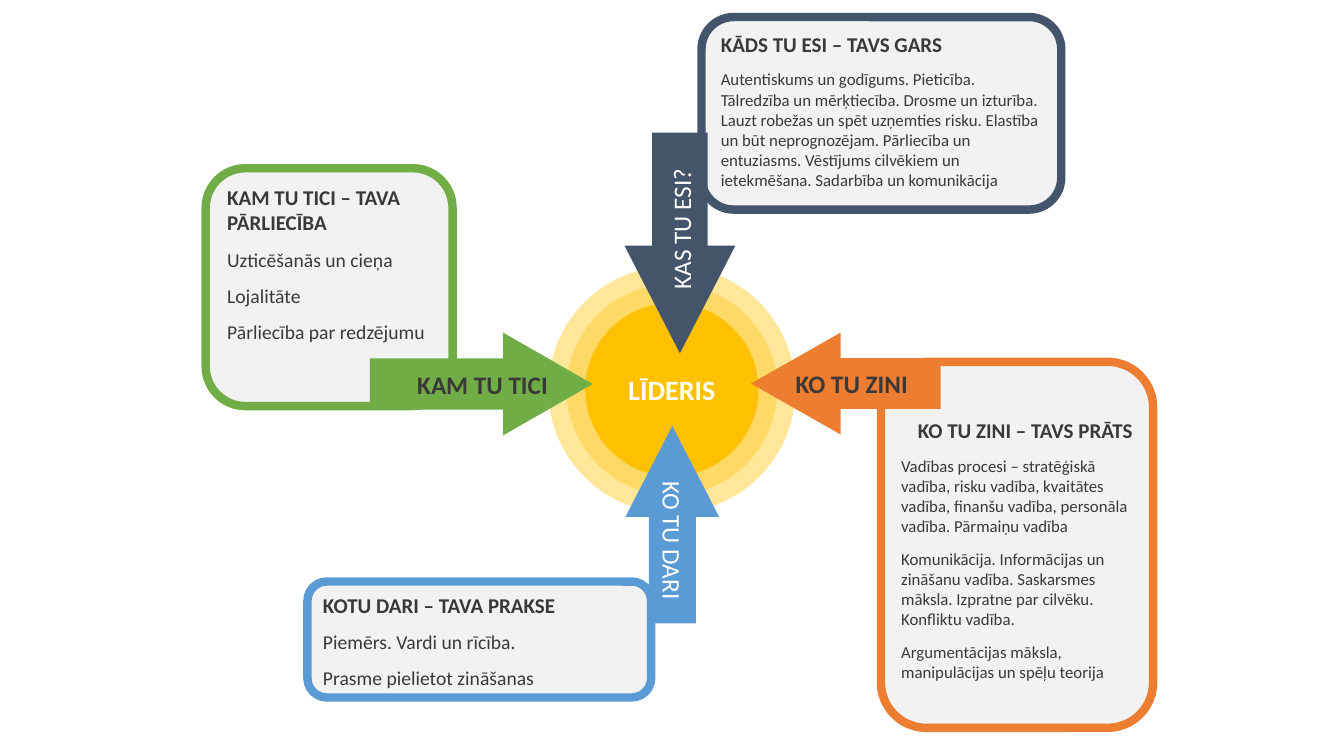
"""Build the leadership slide: four cards with arrows pointing at a central sun."""
import pptx
import pptx.util
import pptx.dml.color
import pptx.enum.shapes
import pptx.enum.text

Pt = pptx.util.Pt
SHAPES = pptx.enum.shapes.MSO_SHAPE
ALIGN = pptx.enum.text.PP_ALIGN
ANCHOR = pptx.enum.text.MSO_ANCHOR

COLORS = {
    "pale": "FFE699", "light": "FFD966", "gold": "FFC000", "card": "F2F2F2",
    "ink": "3B3838", "white": "FFFFFF", "orange": "ED7D31", "green": "70AD47",
    "blue": "5B9BD5", "navy": "44546A",
}
FONT = "Calibri"
SUN_CENTER = (479.9, 278.3)
SUN_RINGS = [(176.4, "pale", ""), (150.5, "light", ""), (123.8, "gold", "LĪDERIS")]
DEFAULT_INSETS = (7.2, 3.6, 7.2, 3.6)

CARDS = [
    {"box": (629.3, 258.5, 194.4, 261.4), "color": "orange", "size": 12,
     "insets": (5, 30.3, 5, 3), "title_align": ALIGN.RIGHT,
     "title": "KO TU ZINI – TAVS PRĀTS",
     "body": ["Vadības procesi – stratēģiskā vadība, risku vadība, kvaitātes vadība, "
              "finanšu vadība, personāla vadība. Pārmaiņu vadība",
              "Komunikācija. Informācijas un zināšanu vadība. Saskarsmes māksla. "
              "Izpratne par cilvēku. Konfliktu vadība.",
              "Argumentācijas māksla, manipulācijas un spēļu teorija"]},
    {"box": (146.9, 120.2, 176.4, 169.9), "color": "green", "size": 14,
     "insets": DEFAULT_INSETS, "title_align": ALIGN.LEFT,
     "title": "KAM TU TICI – TAVA PĀRLIECĪBA",
     "body": ["Uzticēšanās un cieņa", "Lojalitāte", "Pārliecība par redzējumu"]},
    {"box": (219.6, 415.4, 245.5, 82.8), "color": "blue", "size": 14,
     "insets": DEFAULT_INSETS, "title_align": ALIGN.LEFT,
     "title": "KOTU DARI – TAVA PRAKSE",
     "body": ["Piemērs. Vardi un rīcība.", "Prasme pielietot zināšanas"]},
    {"box": (501.1, 12.2, 257, 137.5), "color": "navy", "size": 12,
     "insets": DEFAULT_INSETS, "title_align": ALIGN.LEFT,
     "title": "KĀDS TU ESI – TAVS GARS",
     "body": ["Autentiskums un godīgums. Pieticība. Tālredzība un mērķtiecība. "
              "Drosme un izturība. Lauzt robežas un spēt uzņemties risku. Elastība "
              "un būt neprognozējam. Pārliecība un entuziasms. Vēstījums cilvēkiem "
              "un ietekmēšana. Sadarbība un komunikācija"]},
]

ARROWS = [
    (SHAPES.RIGHT_ARROW, (264.2, 237.6, 159.1, 73.4), 0, 0.87, "green", "KAM TU TICI", ALIGN.RIGHT),
    (SHAPES.RIGHT_ARROW, (406.8, 133.9, 157.7, 79.2), 90, 0.97, "navy", "", ALIGN.LEFT),
    (SHAPES.LEFT_ARROW, (536.4, 237.6, 135.4, 72.7), 0, 0.88, "orange", "KO TU ZINI", ALIGN.LEFT),
    (SHAPES.RIGHT_ARROW, (409.7, 341.3, 141.1, 67), 270, 0.97, "blue", "", ALIGN.LEFT),
]
SIDE_LABELS = [
    ("KAS TU ESI?", (417.6, 149, 138.2, 29), 270),
    ("KO TU DARI", (420.5, 371.5, 119.5, 29), 90),
]


def rgb(name):
    return pptx.dml.color.RGBColor.from_string(COLORS[name])


def add_filled(slide, kind, box, fill, line=None):
    shape = slide.shapes.add_shape(kind, *map(Pt, box))
    shape.shadow.inherit = False
    shape.fill.solid()
    shape.fill.fore_color.rgb = rgb(fill)
    if line:
        shape.line.color.rgb = rgb(line)
        shape.line.width = Pt(6)
    else:
        shape.line.fill.background()
    return shape


def set_frame(shape, insets, anchor):
    frame = shape.text_frame
    frame.word_wrap = True
    frame.vertical_anchor = anchor
    frame.margin_left, frame.margin_top, frame.margin_right, frame.margin_bottom = map(Pt, insets)
    return frame


def write(paragraph, text, size, color, bold, align, after=0):
    paragraph.text = text
    paragraph.alignment = align
    paragraph.space_after = Pt(after)
    for run in paragraph.runs:
        run.font.name = FONT
        run.font.size = Pt(size)
        run.font.bold = bold
        run.font.color.rgb = rgb(color)


def add_sun(slide):
    center_x, center_y = SUN_CENTER
    for diameter, color, text in SUN_RINGS:
        box = (center_x - diameter / 2, center_y - diameter / 2, diameter, diameter)
        ring = add_filled(slide, SHAPES.OVAL, box, color)
        if text:
            frame = set_frame(ring, (0, 3.6, 0, 3.6), ANCHOR.MIDDLE)
            write(frame.paragraphs[0], text, 20, "white", True, ALIGN.CENTER)


def add_card(slide, card):
    shape = add_filled(slide, SHAPES.ROUNDED_RECTANGLE, card["box"], "card", card["color"])
    frame = set_frame(shape, card["insets"], ANCHOR.TOP)
    write(frame.paragraphs[0], card["title"], 15, "ink", True, card["title_align"], 9)
    for text in card["body"]:
        write(frame.add_paragraph(), text, card["size"], "ink", False, ALIGN.LEFT, 9)


def add_arrow(slide, kind, box, rotation, head, color, text, align):
    arrow = add_filled(slide, kind, box, color)
    arrow.rotation = rotation
    arrow.adjustments[0] = 0.5
    arrow.adjustments[1] = head
    if text:
        frame = set_frame(arrow, (0, 3.6, 0, 3.6), ANCHOR.MIDDLE)
        write(frame.paragraphs[0], text, 18, "ink", True, align)


def add_side_label(slide, text, box, rotation):
    label = slide.shapes.add_textbox(*map(Pt, box))
    label.rotation = rotation
    frame = set_frame(label, DEFAULT_INSETS, ANCHOR.TOP)
    write(frame.paragraphs[0], text, 18, "white", False, ALIGN.CENTER)


def main():
    presentation = pptx.Presentation()
    presentation.slide_width, presentation.slide_height = Pt(960), Pt(540)
    slide = presentation.slides.add_slide(presentation.slide_layouts[6])
    add_sun(slide)
    for card in CARDS:
        add_card(slide, card)
    for arrow in ARROWS:
        add_arrow(slide, *arrow)
    for label in SIDE_LABELS:
        add_side_label(slide, *label)
    presentation.save("out.pptx")


if __name__ == "__main__":
    main()
